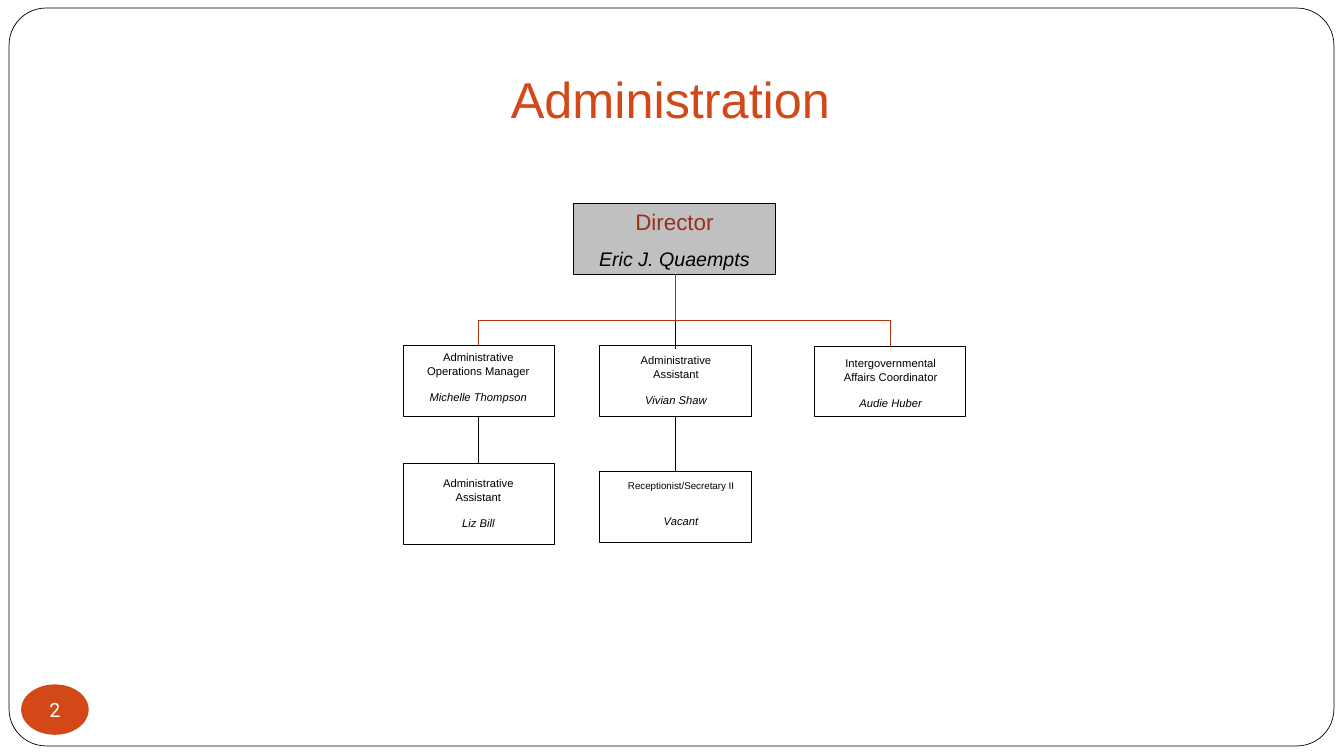
from dataclasses import dataclass

from lxml import etree
from pptx import Presentation
from pptx import util as u
from pptx.dml.color import RGBColor
from pptx.enum import shapes, text
from pptx.oxml.ns import qn


@dataclass(frozen=True)
class Theme:
    font: str = "Arial"
    number_font: str = "Roboto"
    black: str = "000000"
    white: str = "FFFFFF"
    grey: str = "C0C0C0"
    orange: str = "D34817"
    rust: str = "B1360B"
    brick: str = "9B2D1F"
    title: int = 36
    director: int = 16
    name: int = 14
    staff: int = 8
    small: int = 7
    outline: float = 0.75


class ChartPage:
    """Draws the parts of an organisation chart on one slide."""

    def __init__(self, page, theme):
        self.page = page
        self.theme = theme

    def shape(self, kind, left, top, width, height, fill=None, line=None, weight=None):
        shape = self.page.shapes.add_shape(kind, *map(u.Inches, (left, top, width, height)))
        shape.shadow.inherit = False
        self.paint(shape, fill, line, weight)
        return shape

    def paint(self, shape, fill, line, weight=None):
        for part, colour in ((shape.fill, fill), (shape.line.fill, line)):
            if colour:
                part.solid()
                part.fore_color.rgb = RGBColor.from_string(colour)
            else:
                part.background()
        if line:
            shape.line.width = u.Pt(weight or self.theme.outline)

    def set_text(self, para, words, size, colour, font=None, italic=None, before=0):
        para.text = words
        para.alignment = text.PP_ALIGN.CENTER
        para.space_before = u.Pt(before)
        para.font.name = font or self.theme.font
        para.font.size = u.Pt(size)
        para.font.italic = italic
        para.font.color.rgb = RGBColor.from_string(colour)

    def textbox(self, left, top, width, height):
        box = self.page.shapes.add_textbox(*map(u.Inches, (left, top, width, height)))
        box.text_frame.word_wrap = True
        return box.text_frame

    def title(self, words):
        frame = self.textbox(4.48, 0.88, 4.34, 0.5)
        frame.vertical_anchor = text.MSO_ANCHOR.BOTTOM
        frame.margin_bottom = u.Inches(0.1)
        self.set_text(frame.paragraphs[0], words, self.theme.title, self.theme.orange)

    def role_and_name(self, place, role, name, role_style, name_style, gap):
        frame = self.textbox(*place)
        self.set_text(frame.paragraphs[0], role, *role_style)
        self.set_text(frame.add_paragraph(), name, *name_style, italic=True, before=gap)

    def line(self, x, top, bottom, colour):
        line = self.page.shapes.add_connector(
            shapes.MSO_CONNECTOR.STRAIGHT, *map(u.Inches, (x, top, x, bottom)))
        line.line.color.rgb = RGBColor.from_string(colour)
        line.line.width = u.Pt(self.theme.outline)
        etree.SubElement(line._element.spPr, qn("a:effectLst"))

    def bracket(self, points, colour):
        start, *others = [(u.Inches(x), u.Inches(y)) for x, y in points]
        builder = self.page.shapes.build_freeform(*start)
        builder.add_line_segments(others, close=False)
        bracket = builder.convert_to_shape()
        bracket.shadow.inherit = False
        self.paint(bracket, None, colour)

    def number(self, words):
        badge = self.shape(shapes.MSO_SHAPE.OVAL, 0.21, 6.79, 0.67, 0.5, self.theme.orange)
        frame = badge.text_frame
        frame.word_wrap = False
        frame.vertical_anchor = text.MSO_ANCHOR.MIDDLE
        frame.margin_left = frame.margin_right = frame.margin_top = frame.margin_bottom = 0
        self.set_text(frame.paragraphs[0], words, self.theme.name, self.theme.white,
                      self.theme.number_font)


def main():
    theme = Theme()
    deck = Presentation()
    deck.slide_width, deck.slide_height = u.Inches(13.33), u.Inches(7.5)
    chart = ChartPage(deck.slides.add_slide(deck.slide_layouts[6]), theme)
    rectangle = shapes.MSO_SHAPE.RECTANGLE

    # Page frame and title
    frame = chart.shape(shapes.MSO_SHAPE.ROUNDED_RECTANGLE, 0.09, 0.08, 13.14, 7.32,
                        theme.white, theme.black, 0.5)
    frame.adjustments[0] = 0.05
    chart.title("Administration")

    # Director
    chart.shape(rectangle, 5.69, 2.02, 2, 0.7, theme.grey, theme.black)
    chart.role_and_name((5.69, 2.02, 2, 0.72), "Director", "Eric J. Quaempts",
                        (theme.director, theme.brick), (theme.name, theme.black), 8)

    # Staff: box left, top, height; text left, top, width, height; role, name; size, gap
    staff = [
        ((4, 3.43, 0.7), (4.08, 3.43, 1.33, 0.64),
         "Administrative Operations Manager", "Michelle Thompson", theme.staff, 9),
        ((8.08, 3.44, 0.69), (8.17, 3.49, 1.33, 0.64),
         "Intergovernmental Affairs Coordinator", "Audie Huber", theme.staff, 9),
        ((4, 4.6, 0.8), (4.08, 4.68, 1.33, 0.77),
         "Administrative Assistant", "Liz Bill", theme.staff, 9),
        ((5.95, 3.43, 0.7), (6.04, 3.46, 1.33, 0.64),
         "Administrative Assistant", "Vivian Shaw", theme.staff, 9),
        ((5.95, 4.68, 0.7), (6, 4.71, 1.51, 0.72),
         "Receptionist/Secretary II", "Vacant", theme.small, 16),
    ]
    for (left, top, height), place, role, name, size, gap in staff:
        chart.role_and_name(place, role, name, (size, theme.black),
                            (theme.staff, theme.black), gap)
        chart.shape(rectangle, left, top, 1.5, height, line=theme.black)

    # Reporting lines
    left, middle, right, branch = 4.75, 6.7, 8.83, 3.18
    chart.line(middle, 4.13, 4.68, theme.black)
    chart.line(left, 4.13, 4.6, theme.black)
    chart.line(middle, 2.72, branch, theme.rust)
    chart.line(middle, branch, 3.46, theme.black)
    chart.bracket([(left, 3.43), (left, branch), (right, branch), (right, 3.44)], theme.rust)

    # Page number
    chart.number("2")

    deck.save("out.pptx")


if __name__ == "__main__":
    main()
